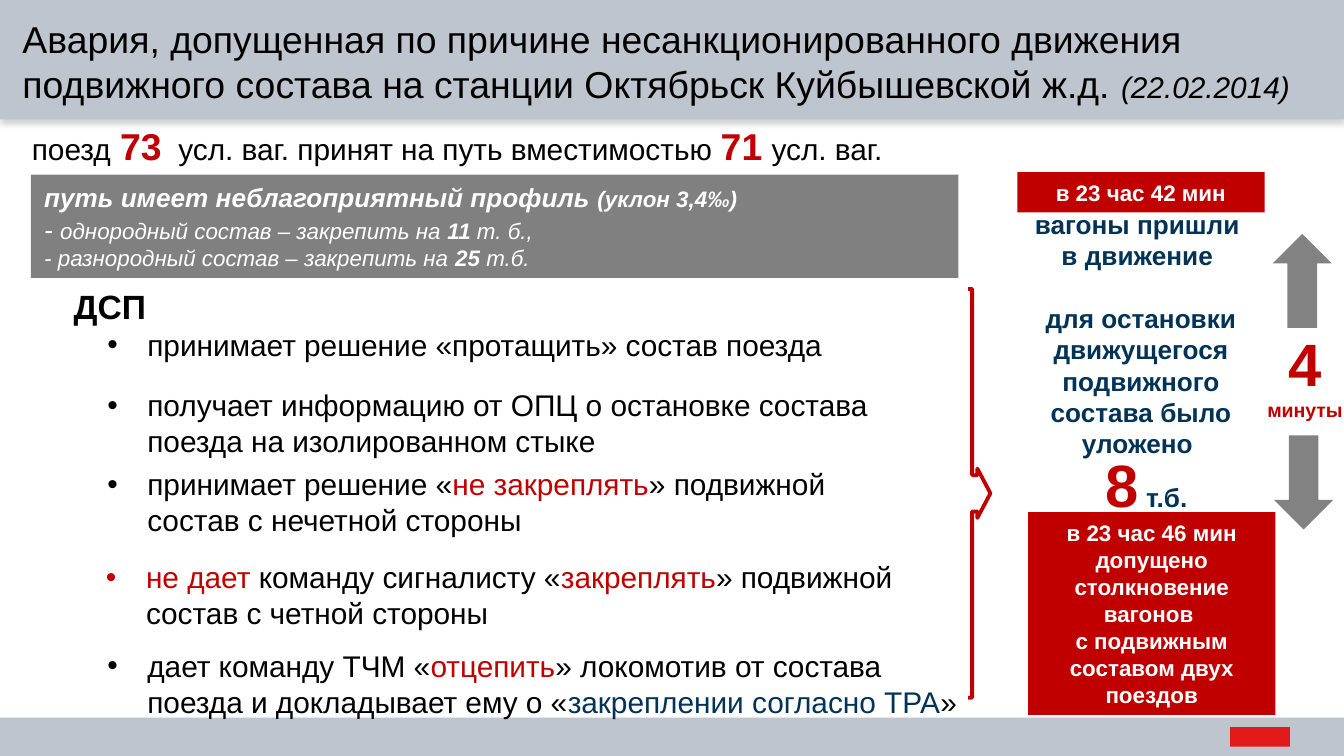
from lxml.etree import SubElement
from pptx import Presentation
from pptx.dml.color import RGBColor
from pptx.enum.shapes import MSO_SHAPE
from pptx.enum.text import MSO_ANCHOR, PP_ALIGN
from pptx.oxml.ns import qn
from pptx.util import Pt

THEME = {
    "font": "Arial",
    "black": "000000", "white": "FFFFFF", "red": "C00000", "navy": "003356",
    "band": "BFC5CE", "panel": "808080", "arrow": "828282", "mark": "E21A1A",
    "huge": 32, "gap": 28, "title": 20, "heading": 18, "body": 16,
    "note": 14, "small": 12, "unit": 10.5,
}
RED = {"color": "red"}
NAVY = {"color": "navy"}
BOLD = {"bold": True}
NUMBER = {"size": "title", "color": "red", "bold": True}
BODY = {"size": "body"}
BADGE = {"size": "small", "color": "white", "bold": True}
COUNT = {"size": "huge", "color": "red", "bold": True}
STATEMENT = {"size": "note", "color": "navy", "bold": True}
PROFILE = {"size": "small", "color": "white", "italic": True}

BANDS = [(0, 0, 720, 64), (0, 384.5, 720, 20.5)]
BRAND_MARK = (659, 389.5, 32, 10.5)
BRACKET = (502.6, 154.8, 28, 219)
BRACKET_ADJUSTMENTS = (0.694, 0.472, 0.25, 0.65)
BRACKET_COVER = (491, 147, 26.6, 232)
ARROWS = [((672.5, 134.6, 50.4, 31.7), 270), ((673.2, 242.6, 50.4, 31.7), 90)]

TITLE = [({"size": "title"}, [
    "Авария, допущенная по причине несанкционированного движения подвижного состава "
    "на станции Октябрьск Куйбышевской ж.д. ",
    ("(22.02.2014)", {"size": "body", "italic": True})])]
INTRO = [(BODY, [
    "поезд", (" ", {"size": "heading"}), ("73", NUMBER), (" ", {"size": "huge"}),
    "усл. ваг. принят на путь вместимостью ", ("71", NUMBER),
    (" ", {"size": "heading"}), "усл. ваг."])]
TRACK_PROFILE = [
    (PROFILE | BOLD, [("путь имеет неблагоприятный профиль ", {"size": "note"}), "(уклон 3,4‰)"]),
    (PROFILE, [("- ", {"size": "note"}), "однородный состав – закрепить на ", ("11 ", BOLD), "т. б.,"]),
    (PROFILE, ["- разнородный состав – закрепить на ", ("25", BOLD), " т.б."]),
]
DUTY_OFFICER = [({"size": "heading", "bold": True}, ["ДСП"])]
STEPS = [
    (50.4, 171.4, 451.4, ["принимает решение «протащить» состав поезда"]),
    (50.4, 203.8, 451.4, ["получает информацию от ОПЦ о остановке состава поезда на изолированном стыке"]),
    (50.4, 246.2, 451.4, ["принимает решение «", ("не закреплять", RED),
                          "» подвижной состав с нечетной стороны"]),
    (49.7, 295.9, 494.6, [("не дает ", RED), "команду сигналисту «", ("закреплять", RED),
                          "» подвижной \nсостав с четной стороны"]),
    (50.4, 343.4, 506.9, ["дает команду ТЧМ «", ("отцепить", RED),
                          "» локомотив от состава \nпоезда и докладывает ему о «",
                          ("закреплении согласно ТРА", NAVY), "»"]),
]
START_TIME = [(BADGE, ["в 23 час 42 мин"])]
MOVEMENT = [
    (STATEMENT, ["вагоны пришли "]),
    (STATEMENT, ["в движение "]),
    (STATEMENT | {"before": 16.8}, ["для остановки движущегося подвижного состава было уложено "]),
]
SHOES = [(COUNT, ["8", (" ", {"size": "note"}), ("т.б.", {"size": "note", "color": "navy"})])]
COLLISION = [
    (BADGE, ["в 23 час 46 мин"]),
    (BADGE, ["допущено столкновение вагонов \nс подвижным составом двух поездов"]),
]
DURATION = [(COUNT, ["4", (" ", {"size": "gap"}), ("минуты", {"size": "unit"})])]


def color(name):
    """Return a theme colour."""
    return RGBColor.from_string(THEME[name])


def style_font(font, style):
    """Apply the given style keys to a font."""
    if "size" in style:
        font.size = Pt(THEME[style["size"]])
    if "color" in style:
        font.color.rgb = color(style["color"])
    for key in ("bold", "italic"):
        if key in style:
            setattr(font, key, style[key])


def add_bullet(paragraph):
    """Give a paragraph a hanging round bullet."""
    properties = paragraph._p.get_or_add_pPr()
    properties.set("marL", str(Pt(21.5)))
    properties.set("indent", str(-Pt(21.5)))
    SubElement(properties, qn("a:buFont"), typeface=THEME["font"])
    SubElement(properties, qn("a:buChar"), char="•")


def write(shape, paragraphs, centered=False, bulleted=False):
    """Fill a shape with styled paragraphs."""
    frame = shape.text_frame
    frame.word_wrap = True
    for index, (base, runs) in enumerate(paragraphs):
        paragraph = frame.add_paragraph() if index else frame.paragraphs[0]
        paragraph.alignment = PP_ALIGN.CENTER if centered else PP_ALIGN.LEFT
        if "before" in base:
            paragraph.space_before = Pt(base["before"])
        if bulleted:
            add_bullet(paragraph)
        paragraph.font.name = THEME["font"]
        style_font(paragraph.font, {"color": "black"} | base)
        for item in runs:
            text, style = (item, {}) if isinstance(item, str) else item
            for line_index, line in enumerate(text.split("\n")):
                if line_index:
                    paragraph.add_line_break()
                run = paragraph.add_run()
                run.text = line
                style_font(run.font, style)


def add_shape(slide, kind, box, fill=None, line=None):
    """Add a flat preset shape."""
    shape = slide.shapes.add_shape(kind, *map(Pt, box))
    shape.shadow.inherit = False
    if fill:
        shape.fill.solid()
        shape.fill.fore_color.rgb = color(fill)
    else:
        shape.fill.background()
    if line:
        shape.line.color.rgb = color(line)
        shape.line.width = Pt(2)
    else:
        shape.line.fill.background()
    return shape


def add_panel(slide, box, fill, paragraphs, centered=False):
    """Add a filled rectangle with text."""
    panel = add_shape(slide, MSO_SHAPE.RECTANGLE, box, fill)
    panel.text_frame.vertical_anchor = MSO_ANCHOR.MIDDLE
    write(panel, paragraphs, centered)


def add_text(slide, box, paragraphs, centered=False, bulleted=False):
    """Add a wrapping text box."""
    write(slide.shapes.add_textbox(*map(Pt, box)), paragraphs, centered, bulleted)


def add_band(slide, box):
    """Add a band with a soft shadow below it."""
    band = add_shape(slide, MSO_SHAPE.RECTANGLE, box, "band")
    effects = band._element.spPr.find(qn("a:effectLst"))
    shadow = SubElement(effects, qn("a:outerShdw"), blurRad=str(Pt(3.1)),
                        dist=str(Pt(1.8)), dir="5400000", rotWithShape="0")
    tint = SubElement(shadow, qn("a:srgbClr"), val=THEME["panel"])
    SubElement(tint, qn("a:alpha"), val="35000")


def main():
    """Build the accident slide."""
    presentation = Presentation()
    presentation.slide_width, presentation.slide_height = Pt(720), Pt(405)
    slide = presentation.slides.add_slide(presentation.slide_layouts[6])
    for box in BANDS:
        add_band(slide, box)
    add_shape(slide, MSO_SHAPE.RECTANGLE, BRAND_MARK, "mark")
    add_text(slide, (5, 5, 715, 80), TITLE)
    add_text(slide, (10, 50.4, 710, 46), INTRO)
    add_panel(slide, (545, 92.2, 132.5, 21.6), "red", START_TIME, True)
    add_text(slide, (545, 108, 132.5, 143), MOVEMENT, True)
    bracket = add_shape(slide, MSO_SHAPE.RIGHT_ARROW_CALLOUT, BRACKET, line="red")
    for index, value in enumerate(BRACKET_ADJUSTMENTS):
        bracket.adjustments[index] = value
    add_shape(slide, MSO_SHAPE.RECTANGLE, BRACKET_COVER, "white", "white")
    add_panel(slide, (16.6, 93.6, 496.8, 55.4), "panel", TRACK_PROFILE)
    add_text(slide, (32.4, 149.8, 258.5, 28.8), DUTY_OFFICER)
    for left, top, width, runs in STEPS:
        add_text(slide, (left, top, width, 26.6 if len(runs[0]) == 43 else 46), [(BODY, runs)], bulleted=True)
    add_text(slide, (547.9, 236.2, 132.5, 46), SHOES, True)
    add_panel(slide, (550.8, 274.3, 132.5, 108.7), "red", COLLISION, True)
    add_text(slide, (668.9, 171.4, 60.5, 59), DURATION, True)
    for box, rotation in ARROWS:
        add_shape(slide, MSO_SHAPE.RIGHT_ARROW, box, "arrow").rotation = rotation
    presentation.save("out.pptx")


if __name__ == "__main__":
    main()
